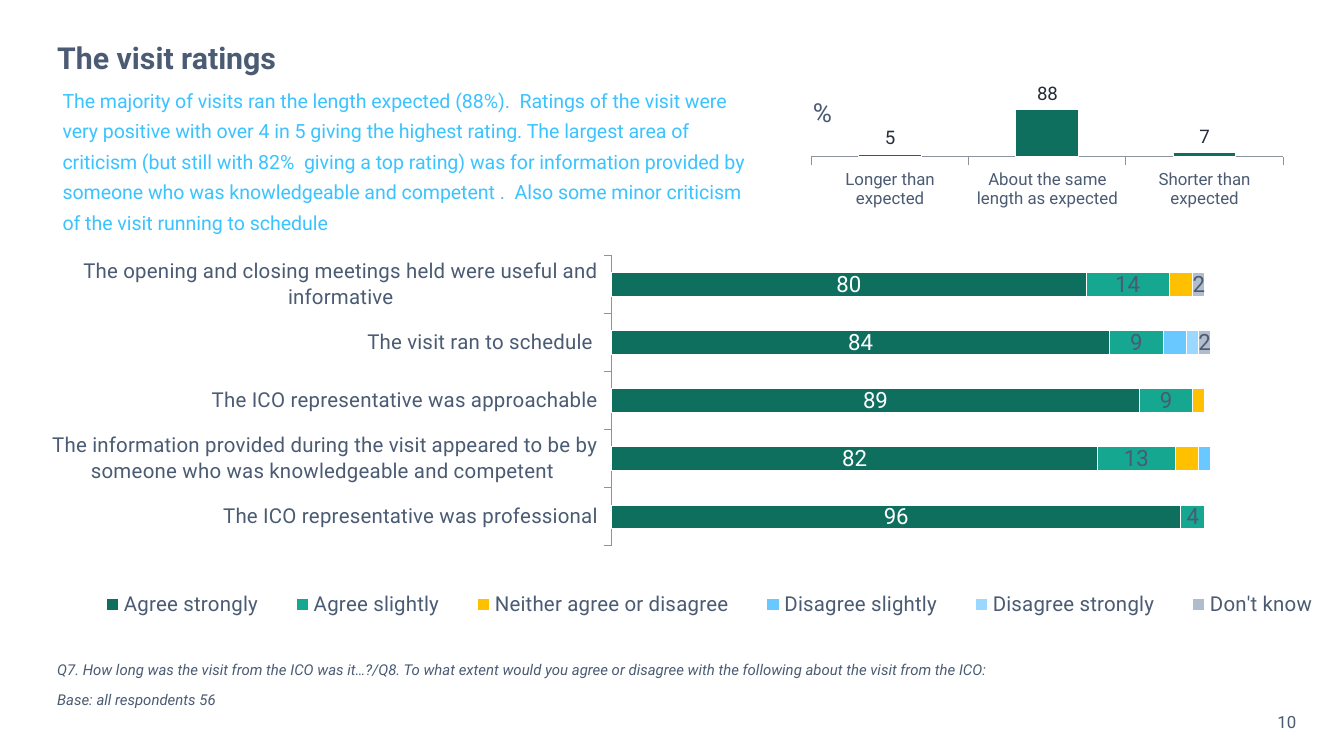
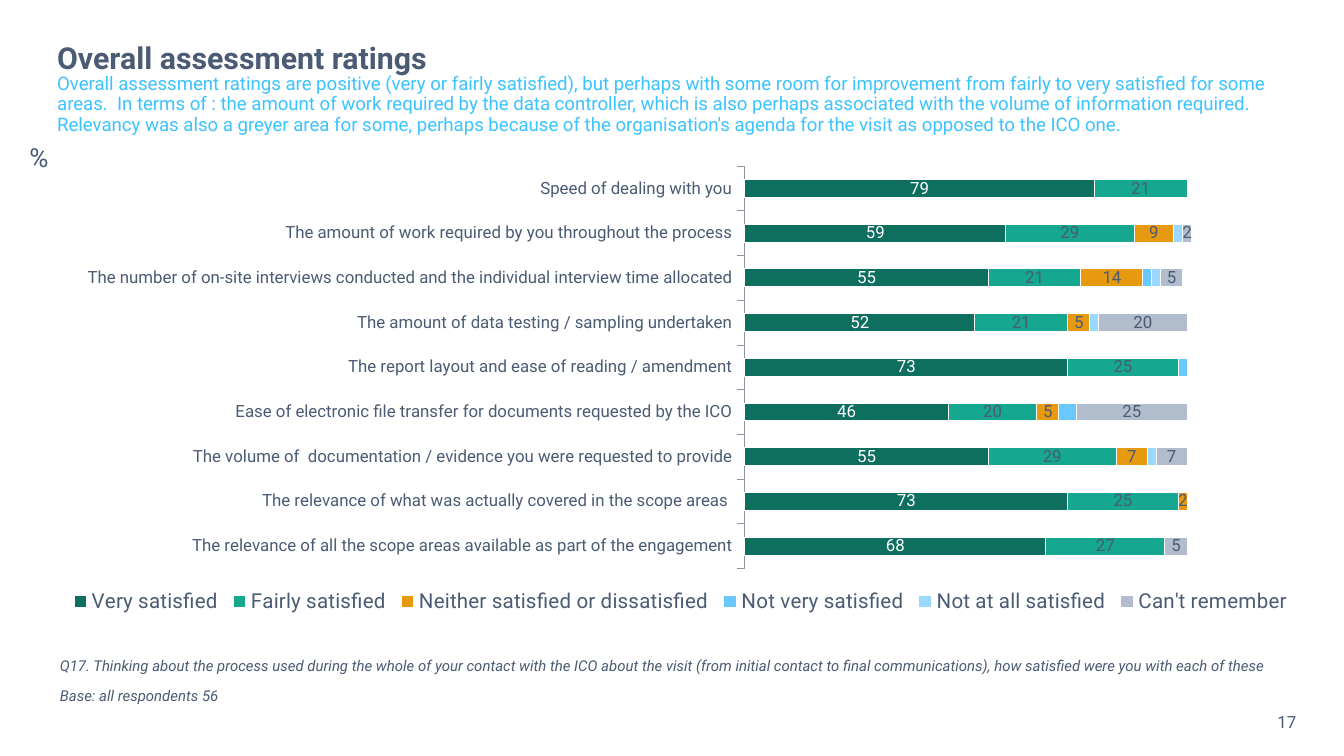
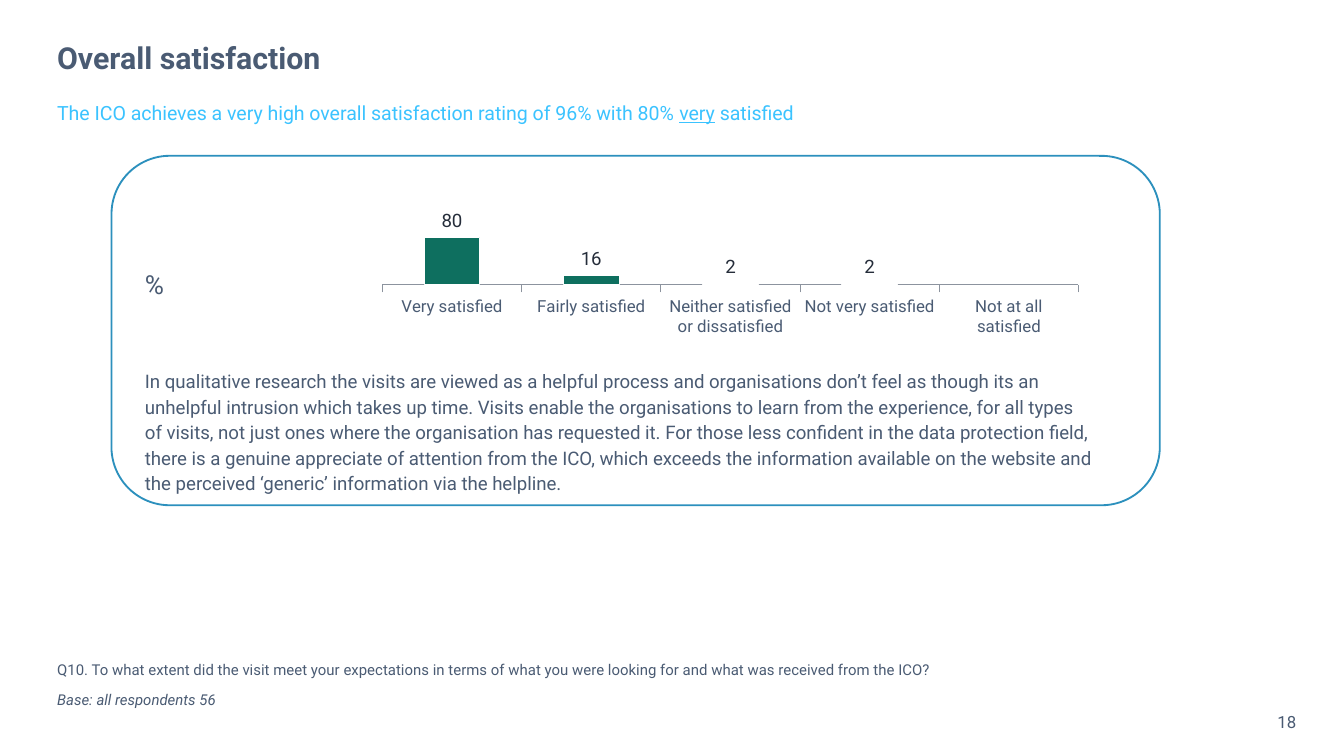
import pptx
import pptx.chart.data
import pptx.dml.color
import pptx.enum.chart
import pptx.enum.shapes
import pptx.enum.text
import pptx.oxml
import pptx.oxml.ns
import pptx.util

FONT = "Roboto"
SLATE, SKY, INK, WHITE = "4A5B73", "3BC3FF", "252D3A", "FFFFFF"
AXIS_GREY, FRAME_BLUE, GREEN = "8C939E", "2C90BD", "0E6F5F"
TEAL, PALE_BLUE, LIGHT_BLUE, GREY = "15A78F", "69C8FF", "9BD8FF", "B1BCCD"
BASE = "Base: all respondents 56"
NARROW, WIDE = (5.4, 2.7), (7.2, 3.6)

SLIDES = [
    {
        "title": "The visit ratings",
        "number": 10,
        "intro": "The majority of visits ran the length expected (88%).  Ratings of the visit were very positive with over 4 in 5 giving the highest rating. The largest area of criticism (but still with 82%  giving a top rating) was for information provided by someone who was knowledgeable and competent .  Also some minor criticism of the visit running to schedule",
        "intro_style": {"box": (0.39, 0.71, 5.28, 0.93), "size": 10.5, "spacing": 1.3},
        "question": "Q7. How long was the visit from the ICO was it…?/Q8. To what extent would you agree or disagree with the following about the visit from the ICO:",
        "question_italic": True,
        "footer_box": (0.35, 4.86, 9.29, 0.49),
        "percent_at": (5.95, 0.67),
        "ratings": {
            "box": (0.35, 1.71, 9.65, 3.19),
            "plot": (0.432, 0.06, 0.552, 0.677),
            "legend": (0.016, 0.84, 0.984, 0.07),
            "category_size": 11,
            "label_size": 12,
            "categories": [
                "The ICO representative was professional",
                " The information provided during the visit appeared to be by someone who was knowledgeable and competent",
                " The ICO representative was approachable",
                "The visit ran to schedule ",
                "The opening and closing meetings held were useful and informative",
            ],
            "series": [
                ("Agree strongly", GREEN, WHITE, [96, 82, 89, 84, 80]),
                ("Agree slightly", TEAL, SLATE, [4, 13, 9, 9, 14]),
                ("Neither agree or disagree", "FFC000", None, [None, 4, 2, 0, 4]),
                ("Disagree slightly", PALE_BLUE, None, [None, 2, None, 4, None]),
                ("Disagree strongly", LIGHT_BLUE, None, [None, None, None, 2, None]),
                ("Don't know", GREY, SLATE, [None, None, None, 2, 2]),
            ],
        },
        "columns": {
            "box": (3.66, 0.61, 5.99, 1),
            "plot": (0.397, 0.157, 0.586, 0.401),
            "maximum": 100,
            "categories": ["Longer than expected", "About the same length as expected", "Shorter than expected"],
            "series": [("Series 1", GREEN, INK, [5, 88, 7])],
        },
    },
    {
        "title": "Overall assessment ratings",
        "number": 17,
        "intro": "Overall assessment ratings are positive (very or fairly satisfied), but perhaps with some room for improvement from fairly to very satisfied for some areas.  In terms of : the amount of work required by the data controller, which is also perhaps associated with the volume of information required.  Relevancy was also a greyer area for some, perhaps because of the organisation's agenda for the visit as opposed to the ICO one.",
        "intro_style": {"box": (0.35, 0.63, 9.29, 0.3), "size": 10, "spacing": 0.9},
        "question": "Q17. Thinking about the process used during the whole of your contact with the ICO about the visit (from initial contact to final communications), how satisfied were you with each of these",
        "question_italic": True,
        "footer_box": (0.37, 4.97, 9.29, 0.2),
        "percent_at": (0.12, 1),
        "ratings": {
            "box": (0.35, 1, 9.29, 3.95),
            "plot": (0.559, 0.06, 0.425, 0.758),
            "legend": (0.015, 0.85, 0.985, 0.06),
            "category_size": 9,
            "label_size": 9,
            "categories": [
                "The relevance of all the scope areas available as part of the engagement",
                "The relevance of what was actually covered in the scope areas ",
                "The volume of  documentation / evidence you were requested to provide",
                "Ease of electronic file transfer for documents requested by the ICO",
                "The report layout and ease of reading / amendment",
                "The amount of data testing / sampling undertaken",
                "The number of on-site interviews conducted and the individual interview time allocated",
                "The amount of work required by you throughout the process",
                "Speed of dealing with you",
            ],
            "series": [
                ("Very satisfied", GREEN, WHITE, [68, 73, 55, 46, 73, 52, 55, 59, 79]),
                ("Fairly satisfied", TEAL, SLATE, [27, 25, 29, 20, 25, 21, 21, 29, 21]),
                ("Neither satisfied or dissatisfied", "E79A0F", SLATE, [None, 2, 7, 5, None, 5, 14, 9, None]),
                ("Not very satisfied", PALE_BLUE, None, [None, None, None, 4, 2, None, 2, None, None]),
                ("Not at all satisfied", LIGHT_BLUE, None, [None, None, 2, None, None, 2, 2, 2, None]),
                ("Can't remember", GREY, SLATE, [5, None, 7, 25, None, 20, 5, 2, None]),
            ],
        },
    },
    {
        "title": "Overall satisfaction",
        "number": 18,
        "intro": "The ICO achieves a very high overall satisfaction rating of 96% with 80% _very_ satisfied",
        "intro_style": {"box": (0.35, 0.63, 9.45, 0.37), "size": 10.5, "spacing": 1.3},
        "question": "Q10. To what extent did the visit meet your expectations in terms of what you were looking for and what was received from the ICO?",
        "question_italic": False,
        "footer_box": (0.35, 4.86, 9.29, 0.49),
        "percent_at": (0.98, 1.95),
        "columns": {
            "box": (0.75, 1.57, 8.84, 1),
            "plot": (0.237, 0.143, 0.586, 0.401),
            "maximum": 90,
            "categories": ["Very satisfied", "Fairly satisfied", "Neither satisfied or dissatisfied", "Not very satisfied", "Not at all satisfied"],
            "series": [("Series 1", GREEN, INK, [80, 16, 2, 2, None])],
        },
        "comment": "In qualitative research the visits are viewed as a helpful process and organisations don’t feel as though its an unhelpful intrusion which takes up time. Visits enable the organisations to learn from the experience, for all types of visits, not just ones where the organisation has requested it. For those less confident in the data protection field, there is a genuine appreciate of attention from the ICO, which exceeds the information available on the website and the perceived ‘generic’ information via the helpline.",
        "comment_box": (0.98, 2.68, 7.25, 1.44),
        "frame_box": (0.83, 1.16, 7.8, 2.6),
    },
]


def color(hex_string):
    return pptx.dml.color.RGBColor.from_string(hex_string)


def inches(box):
    return [pptx.util.Inches(length) for length in box]


def style_font(font, size, hex_color=SLATE, bold=False, italic=False):
    font.name = FONT
    font.size = pptx.util.Pt(size)
    font.bold, font.italic = bold, italic
    font.color.rgb = color(hex_color)


def add_text(slide, box, texts, size, hex_color=SLATE, bold=False, italics=(False,),
             spacing=1.0, margins=NARROW, middle=True, align="LEFT"):
    """Add a text box; text between underscores is underlined."""
    frame = slide.shapes.add_textbox(*inches(box)).text_frame
    frame.word_wrap = True
    frame.margin_left = frame.margin_right = pptx.util.Pt(margins[0])
    frame.margin_top = frame.margin_bottom = pptx.util.Pt(margins[1])
    anchors = pptx.enum.text.MSO_ANCHOR
    frame.vertical_anchor = anchors.MIDDLE if middle else anchors.TOP
    for index, (text, italic) in enumerate(zip(texts, italics)):
        paragraph = frame.add_paragraph() if index else frame.paragraphs[0]
        paragraph.line_spacing = spacing
        paragraph.alignment = getattr(pptx.enum.text.PP_ALIGN, align)
        if index:
            paragraph.space_before = pptx.util.Pt(7.5)
        style_font(paragraph.font, size, hex_color, bold, italic)
        for position, part in enumerate(text.split("_")):
            run = paragraph.add_run()
            run.text = part
            if position % 2:
                run.font.underline = True


def manual_layout(shares, inner=False):
    target = '<c:layoutTarget val="inner"/>' if inner else ""
    modes = "".join(f'<c:{axis}Mode val="edge"/>' for axis in "xy")
    values = "".join(f'<c:{key} val="{share}"/>' for key, share in zip("xywh", shares))
    return pptx.oxml.parse_xml(
        f'<c:layout {pptx.oxml.ns.nsdecls("c")}><c:manualLayout>'
        f"{target}{modes}{values}</c:manualLayout></c:layout>")


def add_chart(slide, content, kind, maximum, category_size, label_size):
    data = pptx.chart.data.CategoryChartData()
    data.categories = content["categories"]
    for name, _, _, values in content["series"]:
        data.add_series(name, values)
    chart = slide.shapes.add_chart(kind, *inches(content["box"]), data).chart
    style_font(chart.font, 18)
    chart.has_title = False
    chart.has_legend = "legend" in content

    plot_area = chart._chartSpace.chart.plotArea
    for layout in plot_area.findall(pptx.oxml.ns.qn("c:layout")):
        plot_area.remove(layout)
    plot_area.insert(0, manual_layout(content["plot"], inner=True))
    if chart.has_legend:
        chart.legend.position = pptx.enum.chart.XL_LEGEND_POSITION.RIGHT
        chart.legend.include_in_layout = False
        style_font(chart.legend.font, 11)
        legend = chart.legend._element
        legend.find(pptx.oxml.ns.qn("c:legendPos")).addnext(manual_layout(content["legend"]))

    value_axis, category_axis = chart.value_axis, chart.category_axis
    value_axis.visible = value_axis.has_major_gridlines = False
    value_axis.minimum_scale, value_axis.maximum_scale = 0, maximum
    category_axis.has_major_gridlines = False
    category_axis.major_tick_mark = pptx.enum.chart.XL_TICK_MARK.OUTSIDE
    category_axis.format.line.color.rgb = color(AXIS_GREY)
    category_axis.format.line.width = pptx.util.Pt(0.5)
    style_font(category_axis.tick_labels.font, category_size)

    stacked = kind == pptx.enum.chart.XL_CHART_TYPE.BAR_STACKED
    plot = chart.plots[0]
    plot.vary_by_categories = False
    plot.gap_width = 150
    plot.overlap = 100 if stacked else 0
    for series, (_, fill, label_color, _) in zip(plot.series, content["series"]):
        series.invert_if_negative = False
        series.format.fill.solid()
        series.format.fill.fore_color.rgb = color(fill)
        series.format.line.color.rgb = color(WHITE)
        series.format.line.width = pptx.util.Pt(0.5)
        if label_color:
            labels = series.data_labels
            labels.show_value = True
            style_font(labels.font, label_size, label_color)
            if not stacked:
                labels.position = pptx.enum.chart.XL_LABEL_POSITION.OUTSIDE_END


def add_frame(slide, box):
    shape = slide.shapes.add_shape(pptx.enum.shapes.MSO_SHAPE.ROUNDED_RECTANGLE, *inches(box))
    shape.shadow.inherit = False
    shape.fill.background()
    shape.line.color.rgb = color(FRAME_BLUE)
    shape.line.width = pptx.util.Pt(1)


def build_slide(presentation, content):
    kinds = pptx.enum.chart.XL_CHART_TYPE
    slide = presentation.slides.add_slide(presentation.slide_layouts[6])
    add_text(slide, (0.35, 0.29, 9.29, 0.31), [content["title"]], 16.2, bold=True, spacing=0.9)
    add_text(slide, (9.01, 5.25, 0.71, 0.24), [str(content["number"])], 9, align="RIGHT")
    add_text(slide, content["footer_box"], [content["question"], BASE], 8,
             italics=(content["question_italic"], True), spacing=0.9)
    add_text(slide, texts=[content["intro"]], hex_color=SKY, **content["intro_style"])
    if "ratings" in content:
        ratings = content["ratings"]
        add_chart(slide, ratings, kinds.BAR_STACKED, 120, ratings["category_size"], ratings["label_size"])
    add_text(slide, (*content["percent_at"], 0.39, 0.34), ["%"], 14, margins=WIDE, middle=False)
    if "columns" in content:
        columns = content["columns"]
        add_chart(slide, columns, kinds.COLUMN_CLUSTERED, columns["maximum"], 9, 10)
    if "comment" in content:
        add_text(slide, content["comment_box"], [content["comment"]], 10,
                 spacing=1.14, margins=WIDE, middle=False)
        add_frame(slide, content["frame_box"])


def main():
    presentation = pptx.Presentation()
    presentation.slide_width = pptx.util.Inches(10)
    presentation.slide_height = presentation.slide_width * 9 // 16
    for content in SLIDES:
        build_slide(presentation, content)
    presentation.save("out.pptx")


if __name__ == "__main__":
    main()
